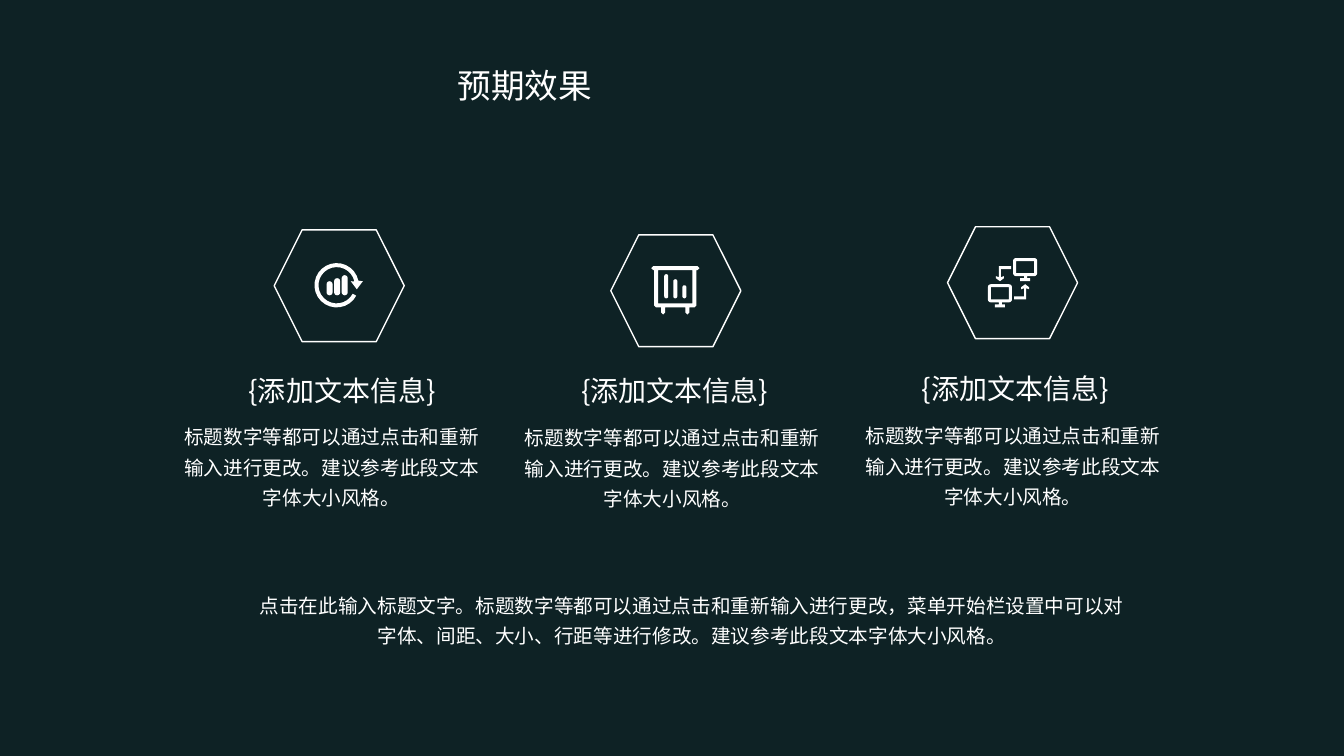
import math

from lxml import etree
from pptx import Presentation
from pptx.dml.color import RGBColor
from pptx.enum import shapes, text
from pptx.oxml import ns
from pptx.util import Inches, Pt

WHITE = "FFFFFF"
DARK = "0E2225"
HEADING_FONT = "Noto Sans CJK JP"
BODY_FONT = "Noto Sans CJK SC"
HEADING = "{添加文本信息}"
BODY = "标题数字等都可以通过点击和重新输入进行更改。建议参考此段文本字体大小风格。"
SUMMARY = (
    "点击在此输入标题文字。标题数字等都可以通过点击和重新输入进行更改，菜单开始栏设置中可以对"
    "字体、间距、大小、行距等进行修改。建议参考此段文本字体大小风格。"
)
CENTER = text.PP_ALIGN.CENTER


def color(value):
    return RGBColor.from_string(value)


def write(shape, content, size, font_name, alignment=CENTER, line_spacing=None):
    frame = shape.text_frame
    frame.word_wrap = True
    frame.auto_size = text.MSO_AUTO_SIZE.SHAPE_TO_FIT_TEXT
    frame.vertical_anchor = text.MSO_ANCHOR.TOP
    paragraph = frame.paragraphs[0]
    paragraph.text = content
    paragraph.alignment = alignment
    paragraph.line_spacing = line_spacing
    paragraph.font.size = Pt(size)
    paragraph.font.name = font_name
    paragraph.font.color.rgb = color(WHITE)
    properties = paragraph._p.pPr.find(ns.qn("a:defRPr"))
    etree.SubElement(properties, ns.qn("a:ea"), typeface=font_name)


def add_text(slide, box, content, size, font_name, line_spacing=None):
    shape = slide.shapes.add_textbox(*map(Inches, box))
    write(shape, content, size, font_name, line_spacing=line_spacing)


def fill_solid(shape, value):
    shape.shadow.inherit = False
    shape.fill.solid()
    shape.fill.fore_color.rgb = color(value)
    shape.line.fill.background()


def arc(center_x, center_y, radius, start, end, steps):
    angles = [math.radians(start + (end - start) * step / steps) for step in range(steps + 1)]
    return [(center_x + radius * math.cos(a), center_y + radius * math.sin(a)) for a in angles]


def rectangle(left, top, width, height):
    right, bottom = left + width, top + height
    return [(left, top), (right, top), (right, bottom), (left, bottom)]


def rounded(left, top, width, height, radius):
    inner = rectangle(left + radius, top + radius, width - 2 * radius, height - 2 * radius)
    return [
        point
        for corner, (x, y) in enumerate(inner)
        for point in arc(x, y, radius, 180 + 90 * corner, 270 + 90 * corner, 3)
    ]


def bars(left, bottom, width, pitch, heights):
    return [
        rounded(left + index * pitch, bottom - height, width, height, width / 2)
        for index, height in enumerate(heights)
    ]


def refresh_icon():
    arrow = [(0.48, 0.18), (0.42, 0.26), (0.36, 0.18)]
    ring = arc(0.22, 0.22, 0.22, 28, 348, 24) + arrow + arc(0.22, 0.22, 0.18, 348, 28, 24)
    return [ring] + bars(0.12, 0.32, 0.06, 0.075, (0.14, 0.17, 0.2))


def board_icon():
    right_half = [
        (0.46, 0), (0.48, 0.02), (0.46, 0.04), (0.45, 0.04), (0.45, 0.39), (0.43, 0.41),
        (0.38, 0.41), (0.38, 0.46), (0.36, 0.48), (0.34, 0.46), (0.34, 0.41),
    ]
    frame = right_half + [(0.48 - x, y) for x, y in reversed(right_half)]
    opening = rectangle(0.07, 0.04, 0.34, 0.33)[::-1]
    return [frame, opening] + bars(0.13, 0.32, 0.04, 0.09, (0.24, 0.19, 0.13))


def monitor(left, top):
    return [
        rounded(left, top, 0.24, 0.18, 0.03),
        rectangle(left + 0.03, top + 0.03, 0.18, 0.12)[::-1],
        rectangle(left + 0.11, top + 0.18, 0.03, 0.02),
        rectangle(left + 0.07, top + 0.2, 0.1, 0.03),
    ]


def network_icon():
    down_arrow = [
        (0.23, 0.08), (0.23, 0.11), (0.13, 0.11), (0.13, 0.19), (0.16, 0.18), (0.16, 0.2),
        (0.12, 0.23), (0.08, 0.2), (0.08, 0.18), (0.11, 0.19), (0.11, 0.08),
    ]
    up_arrow = [(0.49 - x, 0.49 - y) for x, y in down_arrow]
    return monitor(0, 0.26) + monitor(0.25, 0) + [down_arrow, up_arrow]


def draw_icon(slide, left, top, contours):
    placed = [[(Inches(left + x), Inches(top + y)) for x, y in contour] for contour in contours]
    builder = slide.shapes.build_freeform(*placed[0][0])
    for contour in placed:
        builder.move_to(*contour[0])
        builder.add_line_segments(contour[1:], close=True)
    fill_solid(builder.convert_to_shape(), WHITE)


def add_backdrop(slide):
    backdrop = slide.shapes.add_shape(
        shapes.MSO_SHAPE.RECTANGLE, 0, Inches(-0.02), Inches(40 / 3), Inches(7.52)
    )
    fill_solid(backdrop, DARK)
    slide.shapes.title._element.addprevious(backdrop._element)


def add_title(slide, box, content):
    title = slide.shapes.title
    title.left, title.top, title.width, title.height = map(Inches, box)
    write(title, content, 24, HEADING_FONT, text.PP_ALIGN.JUSTIFY, 1.0)


def add_hexagon(slide, left, top):
    hexagon = slide.shapes.add_shape(
        shapes.MSO_SHAPE.HEXAGON, *map(Inches, (left, top, 1.29, 1.11))
    )
    hexagon.shadow.inherit = False
    hexagon.fill.background()
    hexagon.line.color.rgb = color(WHITE)
    hexagon.line.width = Pt(1)


def add_effect(slide, left, top, heading_left, heading_top, body_left, body_top, icon, icon_drop):
    add_hexagon(slide, left, top)
    draw_icon(slide, left + 0.4, top + icon_drop, icon())
    add_text(slide, (heading_left, heading_top, 2.93, 0.44), HEADING, 20, HEADING_FONT)
    add_text(slide, (body_left, body_top, 3.16, 0.99), BODY, 14, BODY_FONT, 1.3)


def build_effects_slide(presentation):
    slide = presentation.slides.add_slide(presentation.slide_layouts[5])
    add_backdrop(slide)
    add_title(slide, (4.44, 0.59, 4.45, 0.5), "预期效果")
    effects = (
        (2.28, 1.93, 3.66, 4.1, refresh_icon, 0.33),
        (2.33, 5.23, 3.66, 4.11, board_icon, 0.31),
        (2.25, 8.61, 3.64, 4.09, network_icon, 0.31),
    )
    for index, (top, heading_left, heading_top, body_top, icon, icon_drop) in enumerate(effects):
        left = 2.72 + index * 3.34
        body_left = 1.71 + index * 3.38
        add_effect(slide, left, top, heading_left, heading_top, body_left, body_top, icon, icon_drop)
    add_text(slide, (2.44, 5.77, 8.85, 0.69), SUMMARY, 14, BODY_FONT, 1.3)


def main():
    presentation = Presentation()
    presentation.slide_width = Inches(40 / 3)
    presentation.slide_height = Inches(7.5)
    build_effects_slide(presentation)
    presentation.save("out.pptx")


if __name__ == "__main__":
    main()
